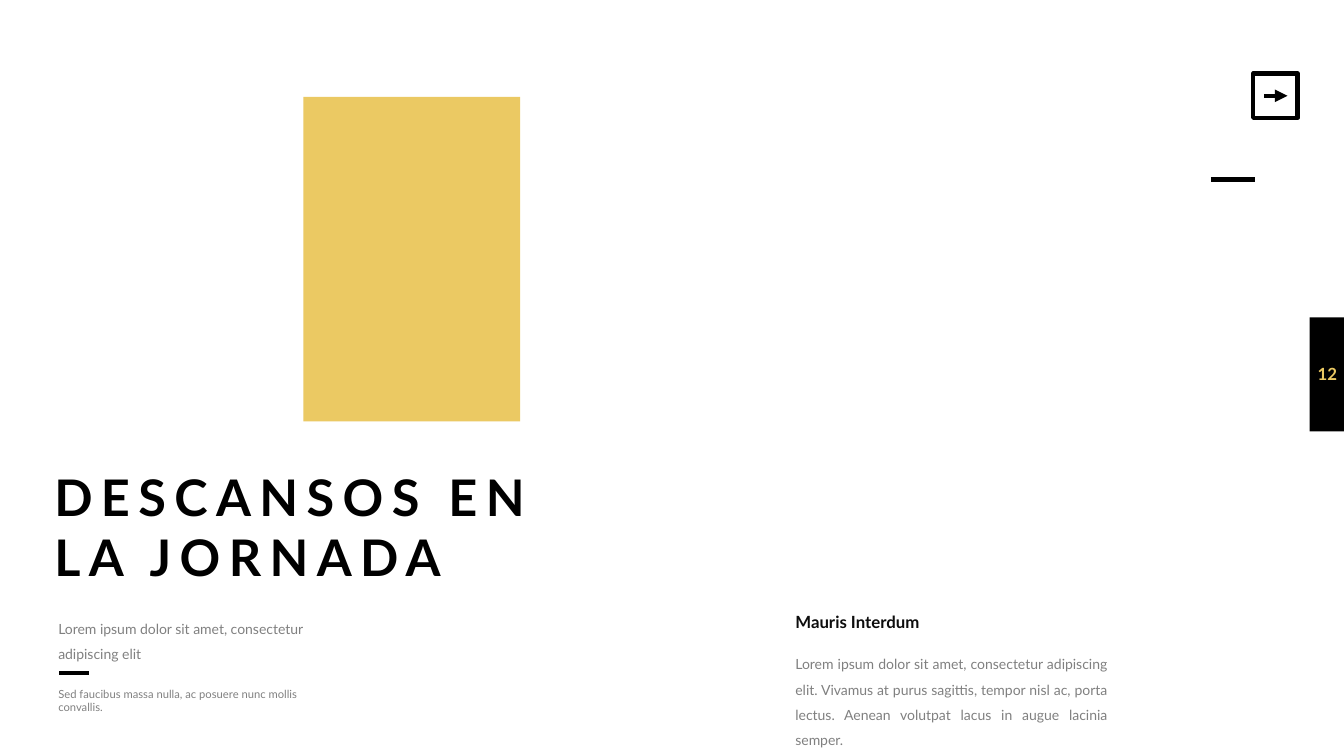
from pptx import Presentation
from pptx.dml.color import RGBColor
from pptx.enum import shapes, text
from pptx.oxml import parse_xml
from pptx.oxml.ns import nsdecls
from pptx.util import Inches, Pt

COLORS = {"black": "000000", "gold": "EBC963", "heading": "0D0D0D", "gray": "808080"}
FONT = "Lato"
RULE_WIDTH = 3
LEFT, JUSTIFY, CENTER = text.PP_ALIGN.LEFT, text.PP_ALIGN.JUSTIFY, text.PP_ALIGN.CENTER

BLOCKS = [
    ((3.01, 0.96, 2.15, 3.22), "gold"),
    ((12.99, 3.15, 0.34, 1.13), "black"),
]
ARROW_FRAME = (12.43, 0.73, 0.44, 0.44)
ARROW = (12.54, 12.77, 0.95)
RULES = [(12.01, 12.45, 1.78), (0.59, 0.88, 6.68)]

PAGE_NUMBER = ((12.95, 3.39, 0.43, 0.64), [
    {"text": "12", "size": 12, "color": "gold", "bold": True, "align": CENTER},
])
TEXTS = [
    ((0.44, 4.57, 5.15, 1.31), [
        {"text": "DESCANSOS EN LA JORNADA", "size": 36, "color": "black", "bold": True, "tracking": 6},
    ]),
    ((7.79, 6.02, 3.29, 1.78), [
        {"text": "Mauris Interdum", "size": 12, "color": "heading", "bold": True,
         "align": JUSTIFY, "after": 11},
        {"text": "Lorem ipsum dolor sit amet, consectetur adipiscing elit. Vivamus at purus sagittis, "
                 "tempor nisl ac, porta lectus. Aenean volutpat lacus in augue lacinia semper.",
         "size": 10, "color": "gray", "align": JUSTIFY, "spacing": 1.5},
    ]),
    ((0.48, 6.02, 3.07, 0.61), [
        {"text": "Lorem ipsum dolor sit amet, consectetur adipiscing elit",
         "size": 10, "color": "gray", "spacing": 1.5},
    ]),
    ((0.48, 6.77, 2.87, 0.37), [
        {"text": "Sed faucibus massa nulla, ac posuere nunc mollis convallis.", "size": 8, "color": "gray"},
    ]),
]


def rgb(name):
    return RGBColor.from_string(COLORS[name])


def add_rectangle(slide, box, fill=None):
    shape = slide.shapes.add_shape(shapes.MSO_SHAPE.RECTANGLE, *map(Inches, box))
    shape.shadow.inherit = False
    if fill:
        shape.fill.solid()
        shape.fill.fore_color.rgb = rgb(fill)
        shape.line.fill.background()
    else:
        shape.fill.background()
        shape.line.color.rgb = rgb("black")
        shape.line.width = Pt(RULE_WIDTH)
    return shape


def add_rule(slide, start, end, y):
    rule = slide.shapes.add_connector(
        shapes.MSO_CONNECTOR.STRAIGHT, Inches(start), Inches(y), Inches(end), Inches(y))
    rule.line.color.rgb = rgb("black")
    rule.line.width = Pt(RULE_WIDTH)
    rule._element.spPr.append(parse_xml(f"<a:effectLst {nsdecls('a')}/>"))
    return rule


def add_text(slide, box, paragraphs):
    frame = slide.shapes.add_textbox(*map(Inches, box)).text_frame
    frame.word_wrap = True
    for index, item in enumerate(paragraphs):
        paragraph = frame.add_paragraph() if index else frame.paragraphs[0]
        paragraph.alignment = item.get("align", LEFT)
        paragraph.line_spacing = item.get("spacing", 1.0)
        paragraph.space_after = Pt(item.get("after", 0))
        run = paragraph.add_run()
        run.text = item["text"]
        run.font.name = FONT
        run.font.size = Pt(item["size"])
        run.font.bold = item.get("bold", False)
        run.font.color.rgb = rgb(item["color"])
        if "tracking" in item:
            run.font._element.set("spc", str(item["tracking"] * 100))
    return frame


def main():
    presentation = Presentation()
    presentation.slide_width = Inches(13.33)
    presentation.slide_height = Inches(7.5)
    slide = presentation.slides.add_slide(presentation.slide_layouts[6])

    for box, fill in BLOCKS:
        add_rectangle(slide, box, fill)

    page_frame = add_text(slide, *PAGE_NUMBER)
    page_frame.word_wrap = False
    page_frame.vertical_anchor = text.MSO_ANCHOR.MIDDLE
    page_frame.margin_left = page_frame.margin_right = 0
    page_frame.margin_top = page_frame.margin_bottom = 0

    for box, paragraphs in TEXTS:
        add_text(slide, box, paragraphs)

    add_rectangle(slide, ARROW_FRAME)
    arrow = add_rule(slide, *ARROW)
    arrow.line._get_or_add_ln().append(parse_xml(f'<a:tailEnd {nsdecls("a")} type="triangle"/>'))
    for rule in RULES:
        add_rule(slide, *rule)

    presentation.save("out.pptx")


if __name__ == "__main__":
    main()
